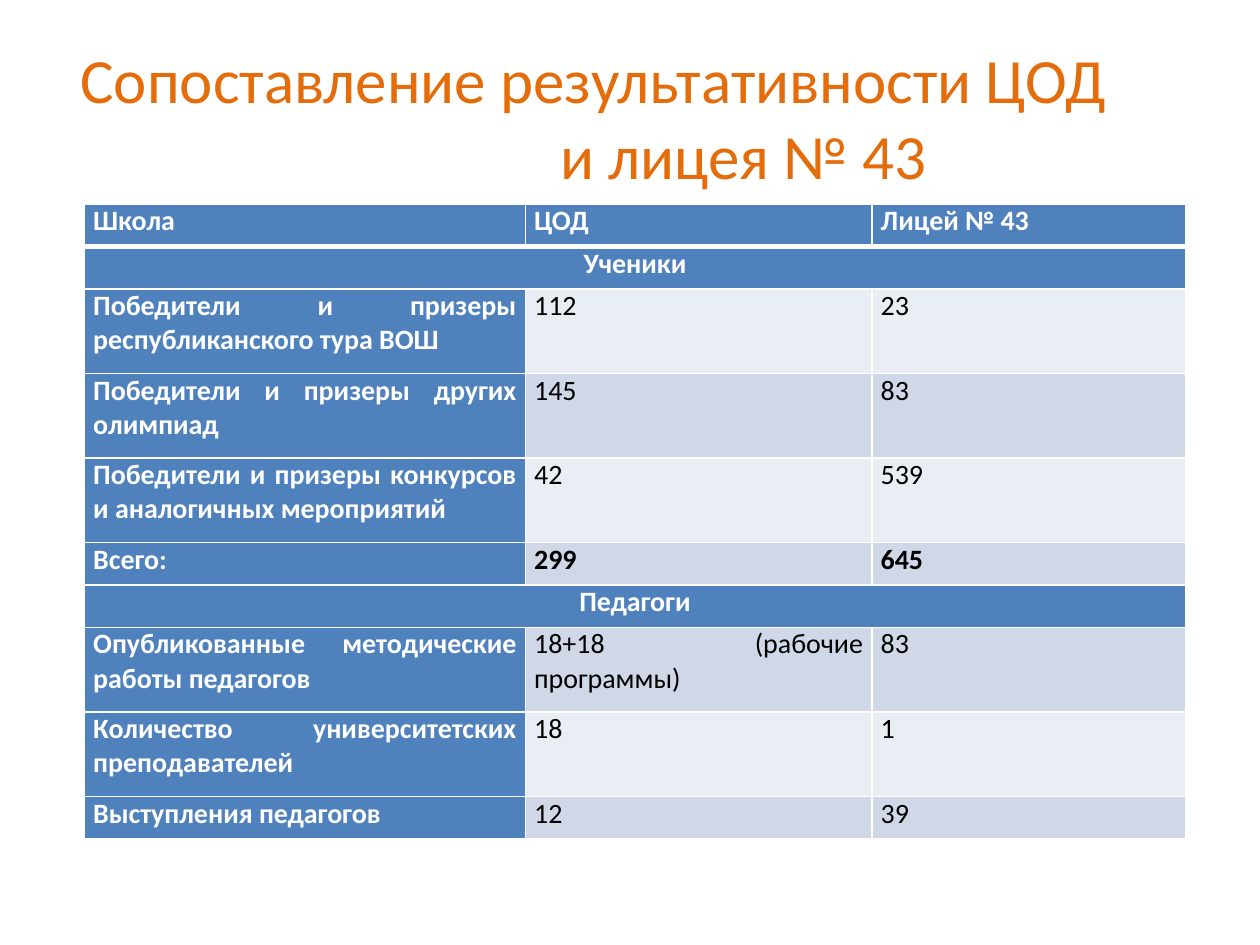
"""Build a slide comparing the results of two schools in a table."""
from dataclasses import dataclass

from lxml.etree import SubElement
from pptx import Presentation
from pptx.dml.color import RGBColor
from pptx.enum.text import MSO_ANCHOR, PP_ALIGN
from pptx.oxml.ns import qn
from pptx.util import Inches, Pt


@dataclass(frozen=True)
class Theme:
    font: str = "Calibri"
    title: str = "E46C0A"
    header: str = "4F81BD"
    light_band: str = "E9EDF4"
    dark_band: str = "D0D8E8"
    border: str = "FFFFFF"
    header_text: str = "FFFFFF"
    body_text: str = "000000"
    title_size: int = 36
    table_size: int = 16


def style_font(font, size, color, bold=False):
    font.name = theme.font
    font.size = Pt(size)
    font.bold = bold
    font.color.rgb = RGBColor.from_string(color)


def add_borders(cell, top=1, bottom=1):
    properties = cell._tc.get_or_add_tcPr()
    for side, width in (("L", 1), ("R", 1), ("T", top), ("B", bottom)):
        line = SubElement(properties, qn(f"a:ln{side}"), w=str(Pt(width)))
        fill = SubElement(line, qn("a:solidFill"))
        SubElement(fill, qn("a:srgbClr"), val=theme.border)


theme = Theme()
TITLE_LINES = ["Сопоставление результативности ЦОД", "и лицея № 43"]
COLUMN_WIDTHS = [3.5, 2.75, 2.49]
ROWS = [
    (1, ["Школа", "ЦОД", "Лицей № 43"]),
    (1, ["Ученики"]),
    (2, ["Победители и призеры республиканского тура ВОШ", "112", "23"]),
    (2, ["Победители и призеры других олимпиад", "145", "83"]),
    (2, ["Победители и призеры конкурсов и аналогичных мероприятий", "42", "539"]),
    (1, ["Всего:", "299", "645"]),
    (1, ["Педагоги"]),
    (2, ["Опубликованные методические работы педагогов", "18+18 (рабочие программы)", "83"]),
    (2, ["Количество университетских преподавателей", "18", "1"]),
    (1, ["Выступления педагогов", "12", "39"]),
]

presentation = Presentation()
presentation.slide_width = Inches(10)
presentation.slide_height = Inches(7.5)
slide = presentation.slides.add_slide(presentation.slide_layouts[5])

title = slide.shapes.title
title.left, title.top = Inches(0.5), Inches(0.3)
title.width, title.height = Inches(9), Inches(1.25)
title_frame = title.text_frame
title_frame.text = "\n".join(TITLE_LINES)
title_frame.vertical_anchor = MSO_ANCHOR.MIDDLE
title_frame.margin_left, title_frame.margin_right = Inches(0.06), Inches(0.64)
for paragraph in title_frame.paragraphs:
    paragraph.alignment = PP_ALIGN.CENTER
    style_font(paragraph.font, theme.title_size, theme.title)
title_frame.paragraphs[1]._p.get_or_add_pPr().set("marL", str(Inches(2.38)))

table_height = Inches(5.04)
line_height = table_height // sum(lines for lines, _ in ROWS)
table = slide.shapes.add_table(
    len(ROWS), len(COLUMN_WIDTHS),
    Inches(0.67), Inches(1.62), Inches(sum(COLUMN_WIDTHS)), table_height,
).table
table.horz_banding = False
for column, width in zip(table.columns, COLUMN_WIDTHS):
    column.width = Inches(width)

for row_index, (lines, texts) in enumerate(ROWS):
    table.rows[row_index].height = line_height * lines
    is_section = len(texts) == 1
    is_total = texts[0] == "Всего:"
    if is_section:
        table.cell(row_index, 0).merge(table.cell(row_index, len(COLUMN_WIDTHS) - 1))
    band = theme.dark_band if row_index % 2 else theme.light_band
    for column_index in range(len(COLUMN_WIDTHS)):
        cell = table.cell(row_index, column_index)
        is_header = row_index == 0 or column_index == 0 or is_section
        add_borders(cell, top=3 if row_index == 1 else 1, bottom=3 if row_index == 0 else 1)
        cell.fill.solid()
        cell.fill.fore_color.rgb = RGBColor.from_string(theme.header if is_header else band)
        cell.margin_left = cell.margin_right = Inches(0.07)
        cell.margin_top = cell.margin_bottom = 0
        if column_index < len(texts):
            cell.text = texts[column_index]
            paragraph = cell.text_frame.paragraphs[0]
            paragraph.alignment = PP_ALIGN.CENTER if is_section else PP_ALIGN.JUSTIFY
            color = theme.header_text if is_header else theme.body_text
            style_font(paragraph.font, theme.table_size, color, is_header or is_total)

presentation.save("out.pptx")
